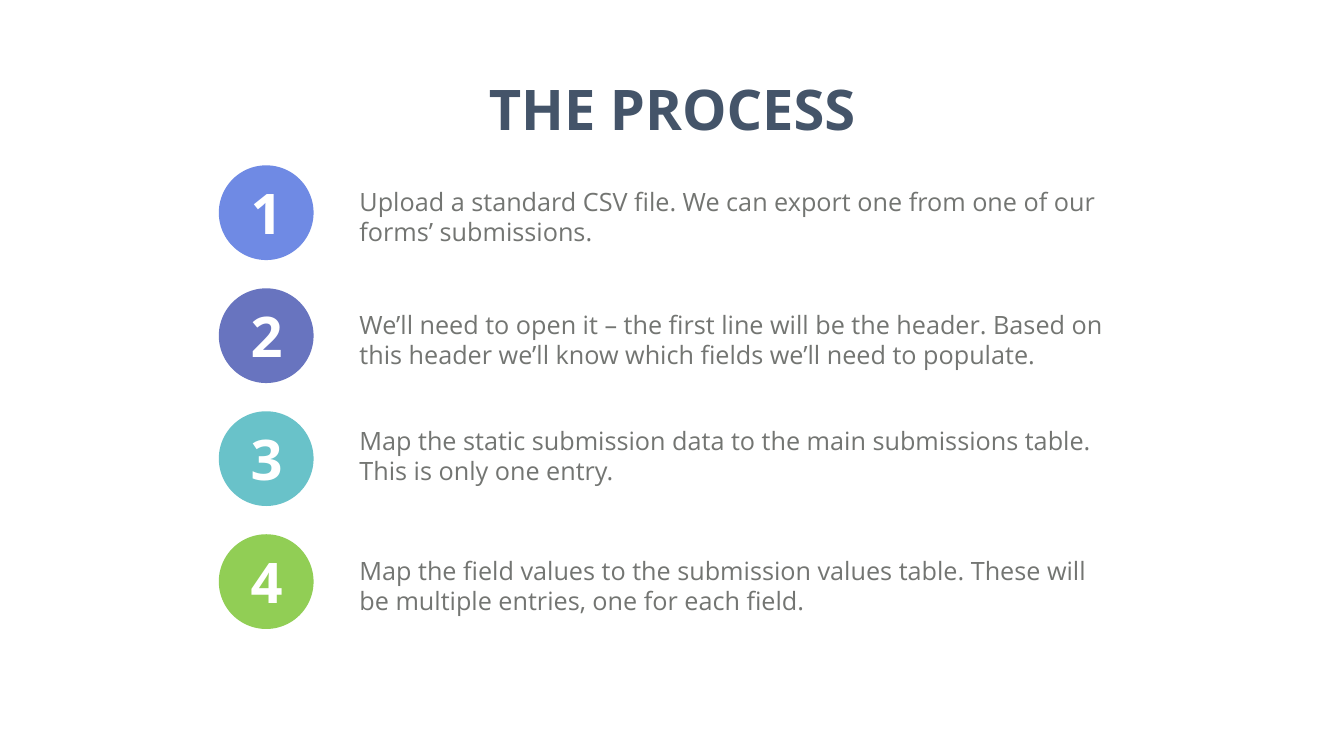
import pptx
import pptx.util
import pptx.dml.color
import pptx.enum.shapes
import pptx.enum.text
import pptx.oxml
import pptx.oxml.ns

Inches = pptx.util.Inches


def color(value):
    return pptx.dml.color.RGBColor.from_string(value)


def write(box, text, size, ink, bold=False, centered=False):
    """Fill a text shape with one paragraph in the slide's text style."""
    frame = box.text_frame
    frame.text = text
    frame.word_wrap = True
    frame.auto_size = pptx.enum.text.MSO_AUTO_SIZE.SHAPE_TO_FIT_TEXT
    frame.vertical_anchor = pptx.enum.text.MSO_ANCHOR.TOP
    frame.margin_left = frame.margin_right = Inches(0.48)
    frame.margin_top = frame.margin_bottom = Inches(0.24)
    para = frame.paragraphs[0]
    align = pptx.enum.text.PP_ALIGN
    para.alignment = align.CENTER if centered else align.LEFT
    # Spacing relative to the text size has no public setter
    para.space_before = pptx.util.Pt(0)
    spacing = para._p.pPr.find(pptx.oxml.ns.qn("a:spcBef"))
    spacing.remove(spacing[0])
    spacing.append(pptx.oxml.parse_xml(
        f'<a:spcPct {pptx.oxml.ns.nsdecls("a")} val="20000"/>'))
    font = para.runs[0].font
    font.name = "Open Sans"
    font.size = pptx.util.Pt(size)
    font.bold = bold
    font.color.rgb = color(ink)


deck = pptx.Presentation()
deck.slide_width = Inches(26.66)
deck.slide_height = Inches(15)
page = deck.slides.add_slide(deck.slide_layouts[5])

title = page.shapes.title
title.left, title.top = Inches(4.99), Inches(1.24)
title.width, title.height = Inches(16.69), Inches(1.83)
write(title, "THE PROCESS", 80, "445469", bold=True, centered=True)

# Circle colour, top of the description, description
steps = [
    ("6F8AE4", 3.45, "Upload a standard CSV file. We can export one from one of "
                     "our forms’ submissions."),
    ("6874BF", 5.89, "We’ll need to open it – the first line will be the header. "
                     "Based on this header we’ll know which fields we’ll need to populate."),
    ("69C2C9", 8.19, "Map the static submission data to the main submissions table. "
                     "This is only one entry."),
    ("91CE55", 10.78, "Map the field values to the submission values table. "
                      "These will be multiple entries, one for each field."),
]

for index, (fill, text_top, description) in enumerate(steps):
    top = 3.28 + index * 2.44
    badge = page.shapes.add_group_shape()
    circle = badge.shapes.add_shape(
        pptx.enum.shapes.MSO_SHAPE.OVAL,
        Inches(4.34), Inches(top), Inches(1.88), Inches(1.88))
    circle.shadow.inherit = False
    circle.fill.solid()
    circle.fill.fore_color.rgb = color(fill)
    circle.line.fill.background()

    number = badge.shapes.add_textbox(
        Inches(4.33), Inches(top + 0.03), Inches(1.92), Inches(1.83))
    write(number, str(index + 1), 80, "FFFFFF", bold=True, centered=True)

    box = page.shapes.add_textbox(
        Inches(6.65), Inches(text_top), Inches(15.78), Inches(1.69))
    write(box, description, 36, "737572")

deck.save("out.pptx")
